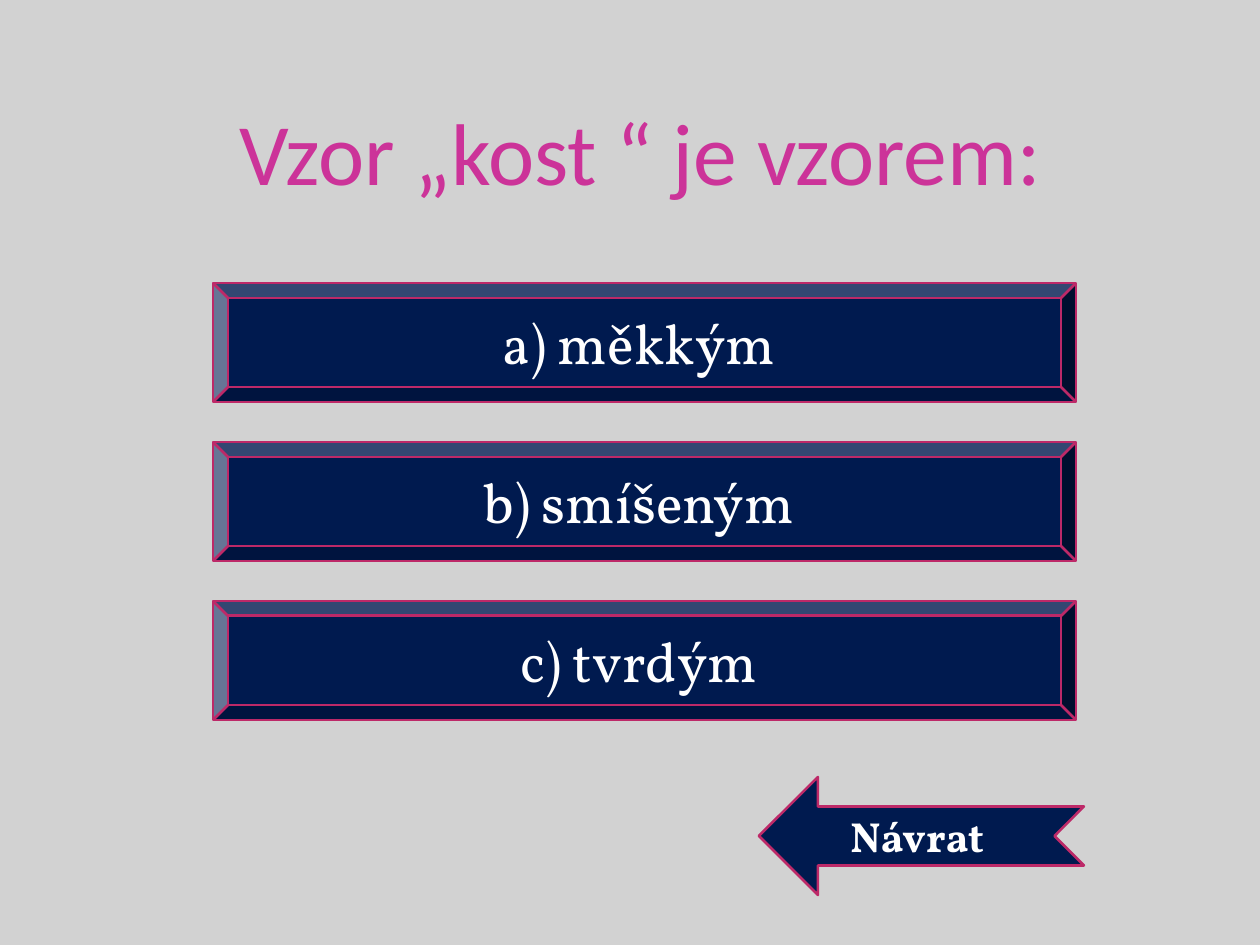
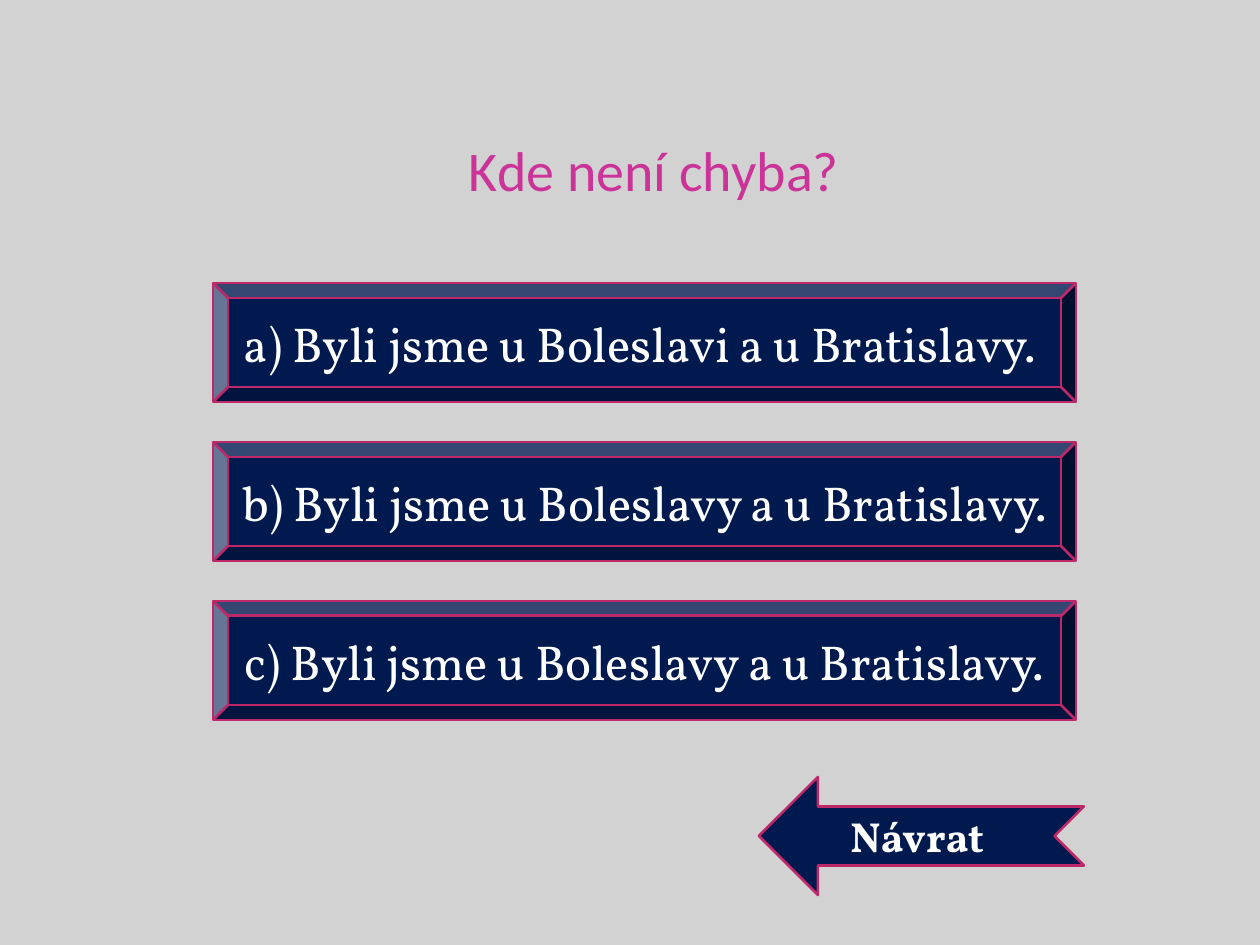
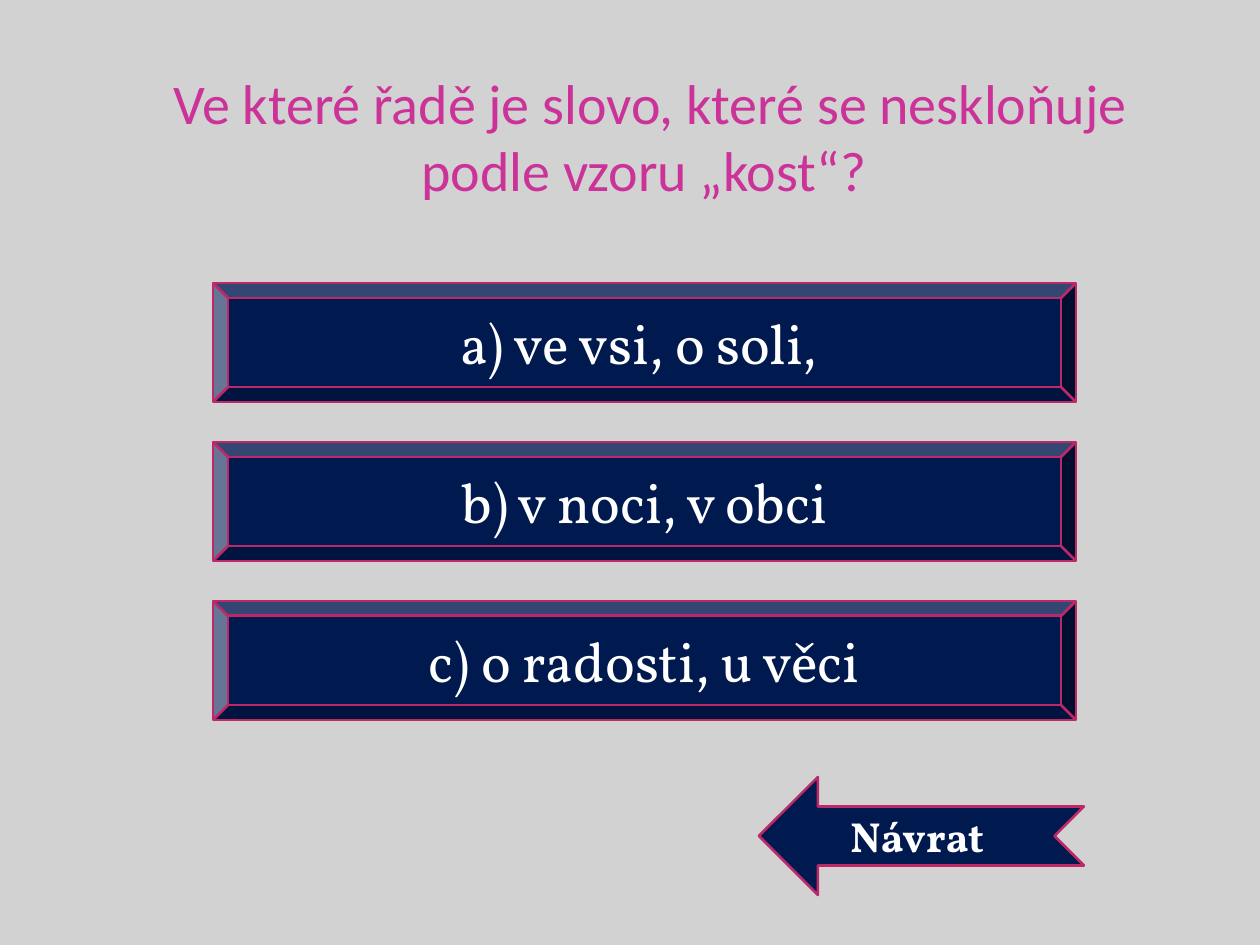
from dataclasses import dataclass

from pptx import Presentation
from pptx.dml.color import RGBColor
from pptx.enum.shapes import MSO_SHAPE
from pptx.enum.text import MSO_ANCHOR, PP_ALIGN
from pptx.shapes.autoshape import Shape
from pptx.slide import Slide
from pptx.util import Emu, Pt

BEVEL = MSO_SHAPE.BEVEL
NOTCHED_ARROW = MSO_SHAPE.NOTCHED_RIGHT_ARROW
CENTER = PP_ALIGN.CENTER
MIDDLE = MSO_ANCHOR.MIDDLE
BOTTOM = MSO_ANCHOR.BOTTOM

PX_PER_INCH = 126
EMU_PER_INCH = 914400
SLIDE_WIDTH = 1260
SLIDE_HEIGHT = 945
BLANK_LAYOUT = 6

COLORS = {
    "background": "D2D2D2",
    "title": "CC3399",
    "button": "001A4F",
    "outline": "BD2968",
    "label": "FFFFFF",
}
TITLE_FONT = "Calibri"
LABEL_FONT = "Vollkorn"
ANSWER_PITCH = 159


@dataclass(frozen=True)
class Area:
    left: int
    top: int
    width: int
    height: int

    def emu(self) -> tuple[Emu, Emu, Emu, Emu]:
        return px(self.left), px(self.top), px(self.width), px(self.height)


@dataclass(frozen=True)
class Question:
    title: str
    title_size: int
    answers: tuple[str, str, str]
    answer_size: int
    title_left: int = 134


QUESTIONS = (
    Question(
        "Vzor „kost “ je vzorem: ",
        50,
        ("a) měkkým ", "b) smíšeným ", "c) tvrdým "),
        32,
    ),
    Question(
        "Kde není chyba? ",
        32,
        (
            "a) Byli jsme u Boleslavi a u Bratislavy. ",
            "b) Byli jsme u Boleslavy a u Bratislavy.",
            "c) Byli jsme u Boleslavy a u Bratislavy. ",
        ),
        28,
        title_left=144,
    ),
    Question(
        "Ve které řadě je slovo, které se neskloňuje podle vzoru „kost“? ",
        32,
        ("a) ve vsi, o soli, ", "b) v noci, v obci", "c) o radosti, u věci"),
        32,
    ),
)


def px(length: int) -> Emu:
    return Emu(round(length * EMU_PER_INCH / PX_PER_INCH))


def color(name: str) -> RGBColor:
    return RGBColor.from_string(COLORS[name])


def write_text(
    box: Shape,
    text: str,
    *,
    size: int,
    font: str = LABEL_FONT,
    fill: str = "label",
    bold: bool = False,
    anchor: MSO_ANCHOR = MIDDLE,
) -> None:
    frame = box.text_frame
    frame.word_wrap = True
    frame.vertical_anchor = anchor
    para = frame.paragraphs[0]
    para.alignment = CENTER
    span = para.add_run()
    span.text = text
    span.font.size = Pt(size)
    span.font.name = font
    span.font.bold = bold
    span.font.color.rgb = color(fill)


def add_title(page: Slide, question: Question) -> None:
    box = page.shapes.add_textbox(*Area(question.title_left, 45, 1033, 158).emu())
    frame = box.text_frame
    frame.margin_left = frame.margin_right = frame.margin_bottom = 0
    write_text(
        box,
        question.title,
        size=question.title_size,
        font=TITLE_FONT,
        fill="title",
        anchor=BOTTOM,
    )


def add_button(page: Slide, kind: MSO_SHAPE, area: Area) -> Shape:
    button = page.shapes.add_shape(kind, *area.emu())
    button.shadow.inherit = False
    button.fill.solid()
    button.fill.fore_color.rgb = color("button")
    button.line.color.rgb = color("outline")
    button.line.width = Pt(1.5)
    return button


def add_return_arrow(page: Slide) -> None:
    arrow = add_button(page, NOTCHED_ARROW, Area(759, 777, 325, 118))
    arrow.element.spPr.get_or_add_xfrm().set("flipH", "1")
    write_text(arrow, "Návrat ", size=24, bold=True)


def add_question(page: Slide, question: Question) -> None:
    page.background.fill.solid()
    page.background.fill.fore_color.rgb = color("background")
    add_title(page, question)
    for row, answer in enumerate(question.answers):
        area = Area(213, 283 + row * ANSWER_PITCH, 863, 119)
        write_text(add_button(page, BEVEL, area), answer, size=question.answer_size)
    add_return_arrow(page)


def main() -> None:
    deck = Presentation()
    deck.slide_width = px(SLIDE_WIDTH)
    deck.slide_height = px(SLIDE_HEIGHT)
    for question in QUESTIONS:
        add_question(deck.slides.add_slide(deck.slide_layouts[BLANK_LAYOUT]), question)
    deck.save("out.pptx")


if __name__ == "__main__":
    main()
